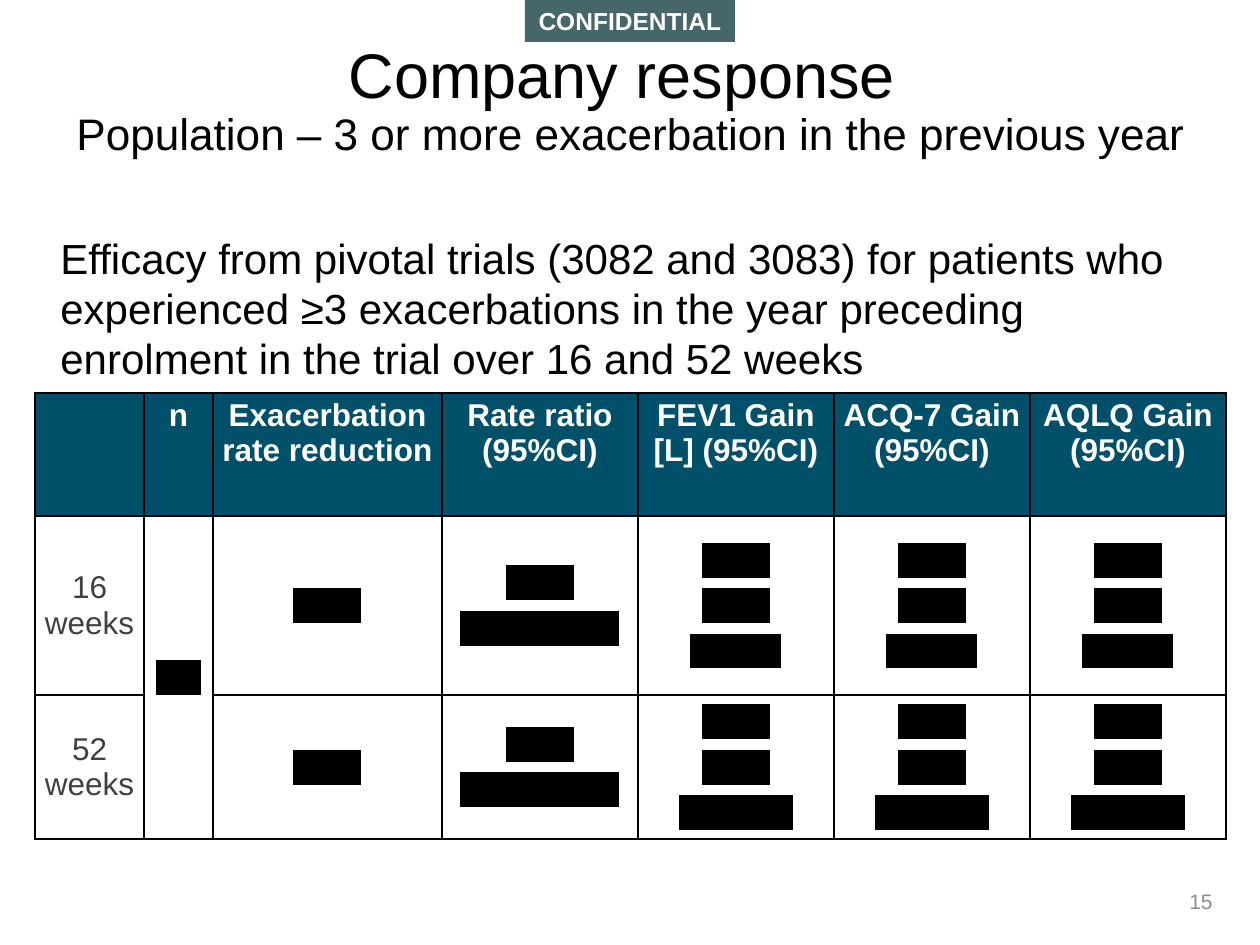
import pptx
import pptx.dml.color
import pptx.enum.shapes
import pptx.enum.text
import pptx.oxml
import pptx.oxml.ns
import pptx.util

EMU_PER_PX = 914400 / 126
ALIGN = pptx.enum.text.PP_ALIGN
ANCHOR = pptx.enum.text.MSO_ANCHOR
INK, WHITE, TEAL = "000000", "FFFFFF", "00506A"
COLUMNS = [109, 69, 229] + [196] * 4
ROWS = [123, 179, 144]
HEADINGS = ["", "n", "Exacerbation rate reduction", "Rate ratio (95%CI)",
            "FEV1 Gain [L] (95%CI)", "ACQ-7 Gain (95%CI)", "AQLQ Gain (95%CI)"]
RATE_RATIO = ["XXX", "XXXXXXX"]
RESULTS = [
    ["16 weeks", ["XX"], ["XXX"], RATE_RATIO] + [["XXX", "XXX", "XXXX"]] * 3,
    ["52 weeks", [], ["XXX"], RATE_RATIO] + [["XXX", "XXX", "XXXXX"]] * 3,
]


def px(length):
    return pptx.util.Emu(round(length * EMU_PER_PX))


def colour(value):
    return pptx.dml.color.RGBColor.from_string(value)


def xml(tag, attributes="", content=""):
    namespace = pptx.oxml.ns.nsdecls("a")
    return pptx.oxml.parse_xml(f"<a:{tag} {namespace} {attributes}>{content}</a:{tag}>")


def solid(value):
    return f'<a:solidFill><a:srgbClr val="{value}"/></a:solidFill>'


def write(paragraph, text, size=18, ink=INK, font="Arial", bold=False,
          align=ALIGN.LEFT, before=0, after=0, spacing=None, highlight=None):
    paragraph.alignment = align
    paragraph.space_before = pptx.util.Pt(before)
    paragraph.space_after = pptx.util.Pt(after)
    paragraph.line_spacing = spacing
    run = paragraph.add_run()
    run.text = text
    run.font.size = pptx.util.Pt(size)
    run.font.name = font
    run.font.bold = bold
    run.font.color.rgb = colour(ink)
    if highlight:
        fill = run.font._element.find(pptx.oxml.ns.qn("a:solidFill"))
        fill.addnext(xml("highlight", content=f'<a:srgbClr val="{highlight}"/>'))


def add_text_box(slide, box, anchor=ANCHOR.TOP):
    frame = slide.shapes.add_textbox(*map(px, box)).text_frame
    frame.word_wrap = True
    frame.vertical_anchor = anchor
    return frame.paragraphs[0]


def add_marking(slide, box):
    marking = slide.shapes.add_shape(pptx.enum.shapes.MSO_SHAPE.RECTANGLE, *map(px, box))
    marking.shadow.inherit = False
    marking.fill.solid()
    marking.fill.fore_color.rgb = colour("47666A")
    marking.line.fill.background()
    marking.text_frame.word_wrap = False
    write(marking.text_frame.paragraphs[0], "CONFIDENTIAL", size=14, ink=WHITE,
          bold=True, align=ALIGN.CENTER)


def add_title(slide, box):
    title = add_text_box(slide, box, ANCHOR.MIDDLE)
    centred = {"align": ALIGN.CENTER, "spacing": 0.9}
    write(title, "Company response ", size=36, **centred)
    title.add_line_break()
    write(title, "Population – 3 or more exacerbation in the previous year",
          size=25.2, **centred)


def add_summary(slide, box):
    write(add_text_box(slide, box),
          "Efficacy from pivotal trials (3082 and 3083) for patients who experienced "
          "≥3 exacerbations in the year preceding enrolment in the trial over 16 and "
          "52 weeks", size=24, before=3, after=3)


def add_page_number(slide, box):
    write(add_text_box(slide, box, ANCHOR.MIDDLE), "15", size=12, ink="8C8C8C",
          align=ALIGN.RIGHT)


def format_cell(cell, fill, anchor):
    cell.margin_left = cell.margin_right = px(5)
    cell.margin_top = cell.margin_bottom = px(5)
    cell.vertical_anchor = anchor
    cell.fill.solid()
    cell.fill.fore_color.rgb = colour(fill)
    properties = cell._tc.get_or_add_tcPr()
    for position, side in enumerate(("lnL", "lnR", "lnT", "lnB")):
        properties.insert(position, xml(side, 'w="12700"', solid(INK)))


def fill_cell(cell, lines, **style):
    for index, line in enumerate(lines):
        frame = cell.text_frame
        paragraph = frame.add_paragraph() if index else frame.paragraphs[0]
        write(paragraph, line, align=ALIGN.CENTER, after=6, **style)


def add_efficacy_table(slide, left, top):
    box = left, top, sum(COLUMNS), sum(ROWS)
    table = slide.shapes.add_table(len(ROWS), len(COLUMNS), *map(px, box)).table
    for column, width in zip(table.columns, COLUMNS):
        column.width = px(width)
    for row, height in zip(table.rows, ROWS):
        row.height = px(height)
    for index, heading in enumerate(HEADINGS):
        cell = table.cell(0, index)
        format_cell(cell, TEAL, ANCHOR.TOP)
        fill_cell(cell, [heading], ink=WHITE, bold=True)
    for row, (period, *redactions) in enumerate(RESULTS, 1):
        format_cell(table.cell(row, 0), WHITE, ANCHOR.MIDDLE)
        fill_cell(table.cell(row, 0), [period], ink="404040")
        for column, lines in enumerate(redactions, 1):
            cell = table.cell(row, column)
            format_cell(cell, WHITE, ANCHOR.MIDDLE)
            fill_cell(cell, lines, font="Times New Roman", highlight=INK)
    table.cell(1, 1).merge(table.cell(2, 1))


def main():
    deck = pptx.Presentation()
    deck.slide_width, deck.slide_height = px(1260), px(945)
    slide = deck.slides.add_slide(deck.slide_layouts[6])
    add_marking(slide, (525, 0, 210, 42))
    add_efficacy_table(slide, 35, 393)
    add_page_number(slide, (941, 876, 284, 50))
    add_title(slide, (35, 37, 1191, 130))
    add_summary(slide, (48, 226, 1142, 165))
    deck.save("out.pptx")


if __name__ == "__main__":
    main()
